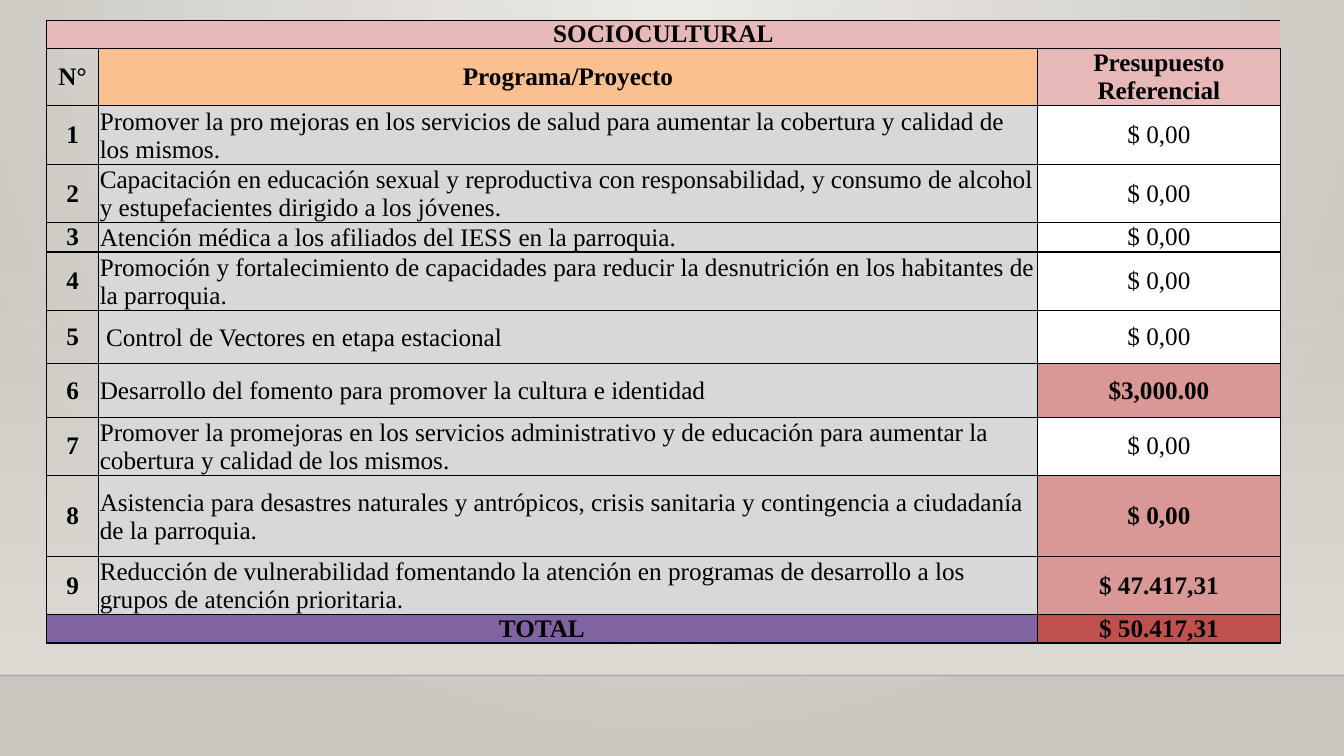
import pptx
import pptx.util
import pptx.dml.color
import pptx.enum.shapes
import pptx.enum.text
import pptx.oxml
import pptx.oxml.ns
import lxml.etree

Inches = pptx.util.Inches
Pt = pptx.util.Pt
ANCHOR = pptx.enum.text.MSO_ANCHOR
ALIGN = pptx.enum.text.PP_ALIGN
qn = pptx.oxml.ns.qn

SLIDE_W, SLIDE_H = 13.33, 7.5
FONT = "Times New Roman"
COLORS = {
    "glow": "ECEAE7", "floor": "CAC7C1", "wall": "DFDBD5", "edge": "000001",
    "ink": "000000", "pink": "E6B9B8", "orange": "FAC090", "gray": "D8D8D8",
    "white": "FFFFFF", "rose": "D99795", "purple": "8064A2", "red": "C0504D",
}
COLUMNS = [0.52, 9.31, 2.41]
ROWS = [0.28, 0.57, 0.58, 0.58, 0.29, 0.58, 0.53, 0.53, 0.58, 0.8, 0.58, 0.28]
PROJECTS = [
    ("Promover la pro mejoras en los servicios de salud para aumentar la cobertura y calidad de los mismos.", "$ 0,00", False),
    ("Capacitación en educación sexual y reproductiva con responsabilidad, y consumo de alcohol y estupefacientes dirigido a los jóvenes.", "$ 0,00", False),
    ("Atención médica a los afiliados del IESS en la parroquia.", "$ 0,00", False),
    ("Promoción y fortalecimiento de capacidades para reducir la desnutrición en los habitantes de la parroquia.", "$ 0,00", False),
    (" Control de Vectores en etapa estacional", "$ 0,00", False),
    ("Desarrollo del fomento para promover la cultura e identidad", "$3,000.00", True),
    ("Promover la promejoras en los servicios administrativo y de educación para aumentar la cobertura y calidad de los mismos.", "$ 0,00", False),
    ("Asistencia para desastres naturales y antrópicos, crisis sanitaria y contingencia a ciudadanía de la parroquia.", "$ 0,00", True),
    ("Reducción de vulnerabilidad fomentando la atención en programas de desarrollo a los grupos de atención prioritaria.", "$ 47.417,31", True),
]


def rgb(name):
    return pptx.dml.color.RGBColor.from_string(COLORS[name])


def set_alpha(color_element, percent):
    alpha = lxml.etree.SubElement(color_element, qn("a:alpha"))
    alpha.set("val", str(percent * 1000))


def set_gradient(fill, first, last):
    fill.gradient()
    for stop, name in zip(fill.gradient_stops, (first, last)):
        stop.color.rgb = rgb(name)
    fill.gradient_stops[0].position = 0
    fill.gradient_stops[1].position = 1


def draw_backdrop(slide):
    """Glow from the top centre, a wall fading in downwards, and the floor edge."""
    background = slide.background.fill
    set_gradient(background, "glow", "floor")
    linear = slide.background._cSld.find(".//" + qn("a:lin"))
    linear.getparent().replace(linear, pptx.oxml.parse_xml(
        f'<a:path {pptx.oxml.ns.nsdecls("a")} path="circle">'
        '<a:fillToRect l="43000" t="0" r="43000" b="100000"/></a:path>'))

    wall_top, floor_top = 2.21, 6.7
    wall = slide.shapes.add_shape(
        pptx.enum.shapes.MSO_SHAPE.RECTANGLE, 0, Inches(wall_top),
        Inches(SLIDE_W), Inches(floor_top - wall_top))
    wall.shadow.inherit = False
    wall.line.fill.background()
    set_gradient(wall.fill, "wall", "wall")
    wall.fill.gradient_angle = 270
    set_alpha(wall._element.spPr.find(".//" + qn("a:srgbClr")), 0)

    edge = slide.shapes.add_connector(
        pptx.enum.shapes.MSO_CONNECTOR.STRAIGHT, 0, Inches(floor_top),
        Inches(SLIDE_W), Inches(floor_top))
    edge.line.width = Pt(1)
    edge.line.color.rgb = rgb("edge")
    set_alpha(edge._element.spPr.find(".//" + qn("a:srgbClr")), 20)
    lxml.etree.SubElement(edge._element.spPr, qn("a:effectLst"))


def set_borders(cell, sides):
    properties = cell._tc.get_or_add_tcPr()
    for side in "LRTB":
        paint = (f'<a:solidFill><a:srgbClr val="{COLORS["ink"]}"/></a:solidFill>'
                 if side in sides else "<a:noFill/>")
        properties.append(pptx.oxml.parse_xml(
            f'<a:ln{side} {pptx.oxml.ns.nsdecls("a")} w="12700">{paint}</a:ln{side}>'))


def write_cell(cell, text, fill=None, bold=True, align=ALIGN.CENTER,
               anchor=ANCHOR.MIDDLE, margin=0):
    cell.margin_left = cell.margin_right = cell.margin_top = Inches(margin)
    cell.margin_bottom = 0
    cell.vertical_anchor = anchor
    if fill:
        cell.fill.solid()
        cell.fill.fore_color.rgb = rgb(fill)
    else:
        cell.fill.background()
    paragraph = cell.text_frame.paragraphs[0]
    paragraph.alignment = align
    run = paragraph.add_run()
    run.text = text
    run.font.name = FONT
    run.font.size = Pt(18)
    run.font.bold = bold
    run.font.color.rgb = rgb("ink")


def draw_budget(slide, left, top):
    budget = slide.shapes.add_table(
        len(ROWS), len(COLUMNS), Inches(left), Inches(top),
        Inches(sum(COLUMNS)), Inches(sum(ROWS))).table
    budget.first_row = budget.horz_banding = False
    for column, width in zip(budget.columns, COLUMNS):
        column.width = Inches(width)
    for row, height in zip(budget.rows, ROWS):
        row.height = Inches(height)

    last = len(ROWS) - 1
    for r in range(len(ROWS)):
        for c in range(len(COLUMNS)):
            set_borders(budget.cell(r, c), "LTB" if r == 0 else "LRTB")
    budget.cell(0, 0).merge(budget.cell(0, 2))
    budget.cell(last, 0).merge(budget.cell(last, 1))

    write_cell(budget.cell(0, 0), "SOCIOCULTURAL", "pink", anchor=ANCHOR.BOTTOM)
    headings = [("N°", None), ("Programa/Proyecto", "orange"),
                ("Presupuesto Referencial", "pink")]
    for c, (heading, fill) in enumerate(headings):
        write_cell(budget.cell(1, c), heading, fill)
    for number, (project, amount, funded) in enumerate(PROJECTS, start=1):
        r = number + 1
        write_cell(budget.cell(r, 0), str(number))
        write_cell(budget.cell(r, 1), project, "gray", bold=False,
                   align=ALIGN.LEFT, margin=0.01)
        write_cell(budget.cell(r, 2), amount, "rose" if funded else "white", bold=funded)
    write_cell(budget.cell(last, 0), "TOTAL", "purple", anchor=ANCHOR.BOTTOM)
    write_cell(budget.cell(last, 2), "$ 50.417,31", "red")


def main():
    deck = pptx.Presentation()
    deck.slide_width = Inches(SLIDE_W)
    deck.slide_height = Inches(SLIDE_H)
    slide = deck.slides.add_slide(deck.slide_layouts[6])
    draw_backdrop(slide)
    draw_budget(slide, left=0.46, top=0.2)
    deck.save("out.pptx")


if __name__ == "__main__":
    main()
